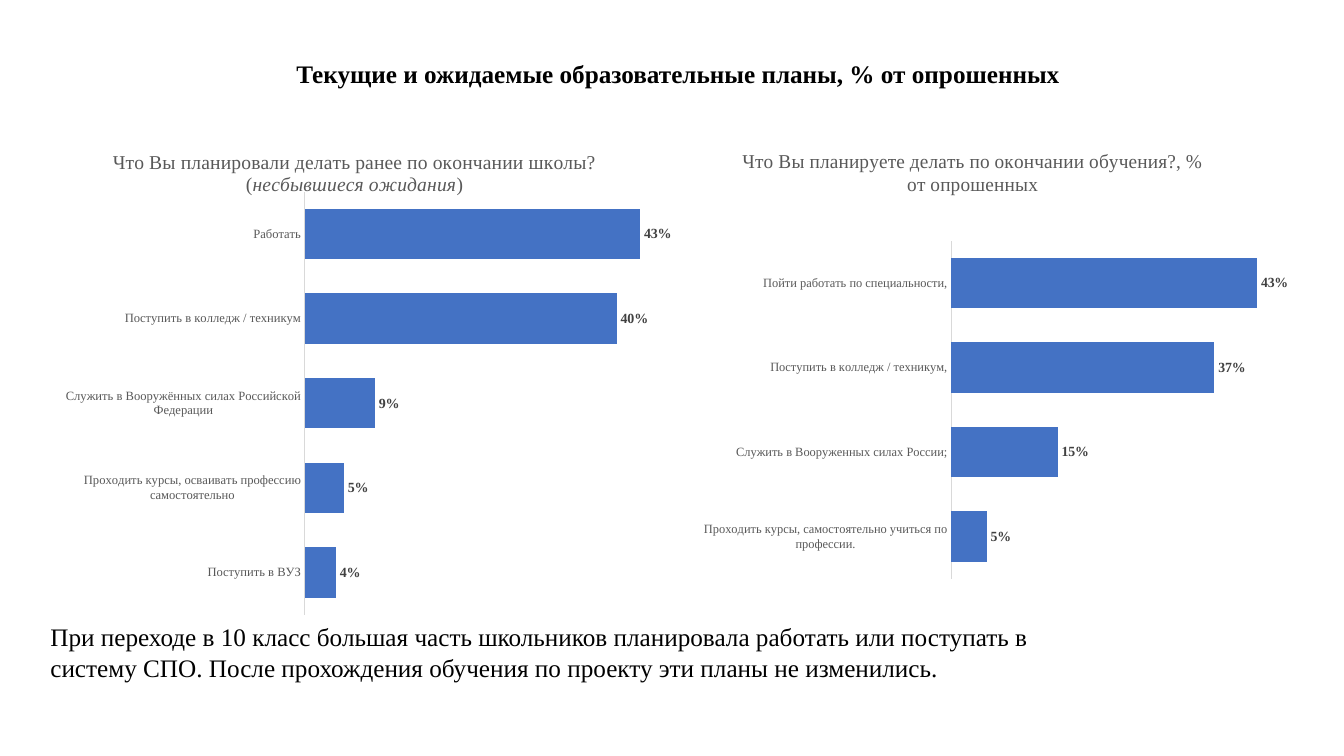
from pptx import Presentation
from pptx.chart.data import CategoryChartData as Data
from pptx.dml.color import RGBColor as RGB
from pptx.enum.chart import XL_CHART_TYPE as Kind, XL_LABEL_POSITION as Spot, XL_TICK_MARK as Tick
from pptx.enum.text import MSO_ANCHOR as Anchor, PP_ALIGN as Align
from pptx.oxml import parse_xml
from pptx.util import Cm, Pt

FACE = "Times New Roman"
HEAD = "Текущие и ожидаемые образовательные планы, % от опрошенных"
NOTE = ("При переходе в 10 класс большая часть школьников планировала работать или поступать в "
        "систему СПО. После прохождения обучения по проекту эти планы не изменились.")
CHARTS = [
    {
        "box": (1.02, 3.18, 15.9, 12.7),
        "plot": (0.42, 0.13, 0.57, 0.84),
        "title": [("Что Вы планировали делать ранее по окончании школы? (", False),
                  ("несбывшиеся ожидания", True), (")", False)],
        "bars": [("Поступить в ВУЗ", 0.04),
                 ("Проходить курсы, осваивать профессию самостоятельно", 0.05),
                 ("Служить в Вооружённых силах Российской Федерации", 0.09),
                 ("Поступить в колледж / техникум", 0.40),
                 ("Работать", 0.43)],
    },
    {
        "box": (16.94, 3.18, 15.52, 12.01),
        "plot": (0.46, 0.24, 0.54, 0.71),
        "title": [("Что Вы планируете делать по окончании обучения?, % от опрошенных", False)],
        "bars": [("Проходить курсы, самостоятельно учиться по профессии.", 0.05),
                 ("Служить в Вооруженных силах России;", 0.15),
                 ("Поступить в колледж / техникум,", 0.37),
                 ("Пойти работать по специальности,", 0.43)],
    },
]
TITLE_AT = (0.11, 0.04)
TOP = 0.46
NS = "http://schemas.openxmlformats.org/drawingml/2006/chart"


def hue(code):
    return RGB.from_string(code)


def style(font, size, code, bold=False):
    font.name, font.size, font.bold = FACE, Pt(size), bold
    font.color.rgb = hue(code)


def place(node, index, spots, inner=False):
    for old in node.findall(f"{{{NS}}}layout"):
        node.remove(old)
    keys = "xywh"[:len(spots)]
    parts = '<c:layoutTarget val="inner"/>' if inner else ""
    parts += "".join(f'<c:{key}Mode val="edge"/>' for key in "xy")
    parts += "".join(f'<c:{key} val="{val}"/>' for key, val in zip(keys, spots))
    node.insert(index, parse_xml(
        f'<c:layout xmlns:c="{NS}"><c:manualLayout>{parts}</c:manualLayout></c:layout>'))


def add_text(slide, box, text, bold=False):
    frame = slide.shapes.add_textbox(*map(Cm, box)).text_frame
    frame.word_wrap = True
    frame.text = text
    style(frame.paragraphs[0].runs[0].font, 18, "000000", bold)
    return frame


def add_bars(slide, item):
    data = Data(number_format="0%")
    data.categories = [name for name, val in item["bars"]]
    data.add_series("Series 1", [val for name, val in item["bars"]])
    chart = slide.shapes.add_chart(Kind.BAR_CLUSTERED, *map(Cm, item["box"]), data).chart
    style(chart.font, 10, "000000")
    chart.has_legend = False

    chart.has_title = True
    title = chart.chart_title
    para = title.text_frame.paragraphs[0]
    for text, slant in item["title"]:
        run = para.add_run()
        run.text = text
        style(run.font, 14, "595959")
        run.font.italic = slant
    place(title.element if hasattr(title, "element") else title._element, 1, TITLE_AT)
    place(chart.element.find(f".//{{{NS}}}plotArea"), 0, item["plot"], True)

    cats, vals = chart.category_axis, chart.value_axis
    style(cats.tick_labels.font, 9, "595959")
    cats.major_tick_mark = cats.minor_tick_mark = Tick.NONE
    cats.format.line.color.rgb = hue("D9D9D9")
    cats.format.line.width = Pt(0.75)
    vals.minimum_scale, vals.maximum_scale = 0, TOP
    vals.has_major_gridlines = False
    vals.visible = False

    plot = chart.plots[0]
    plot.gap_width = 68
    plot.vary_by_categories = False
    fill = plot.series[0].format.fill
    fill.solid()
    fill.fore_color.rgb = hue("4472C4")
    plot.has_data_labels = True
    tags = plot.data_labels
    tags.show_value = True
    tags.number_format, tags.number_format_is_linked = "0%", False
    tags.position = Spot.OUTSIDE_END
    style(tags.font, 10, "404040", True)


def main():
    """Build the slide of school leavers' plans and save it."""
    deck = Presentation()
    deck.slide_width, deck.slide_height = Cm(33.87), Cm(19.05)
    slide = deck.slides.add_slide(deck.slide_layouts[6])
    head = add_text(slide, (6.32, 0.94, 21.54, 1.9), HEAD, True)
    head.vertical_anchor = Anchor.MIDDLE
    para = head.paragraphs[0]
    para.alignment, para.line_spacing, para.space_after = Align.CENTER, 0.9, Pt(6)
    for item in CHARTS:
        add_bars(slide, item)
    add_text(slide, (1.02, 15.54, 27.15, 1.8), NOTE)
    deck.save("out.pptx")


if __name__ == "__main__":
    main()
